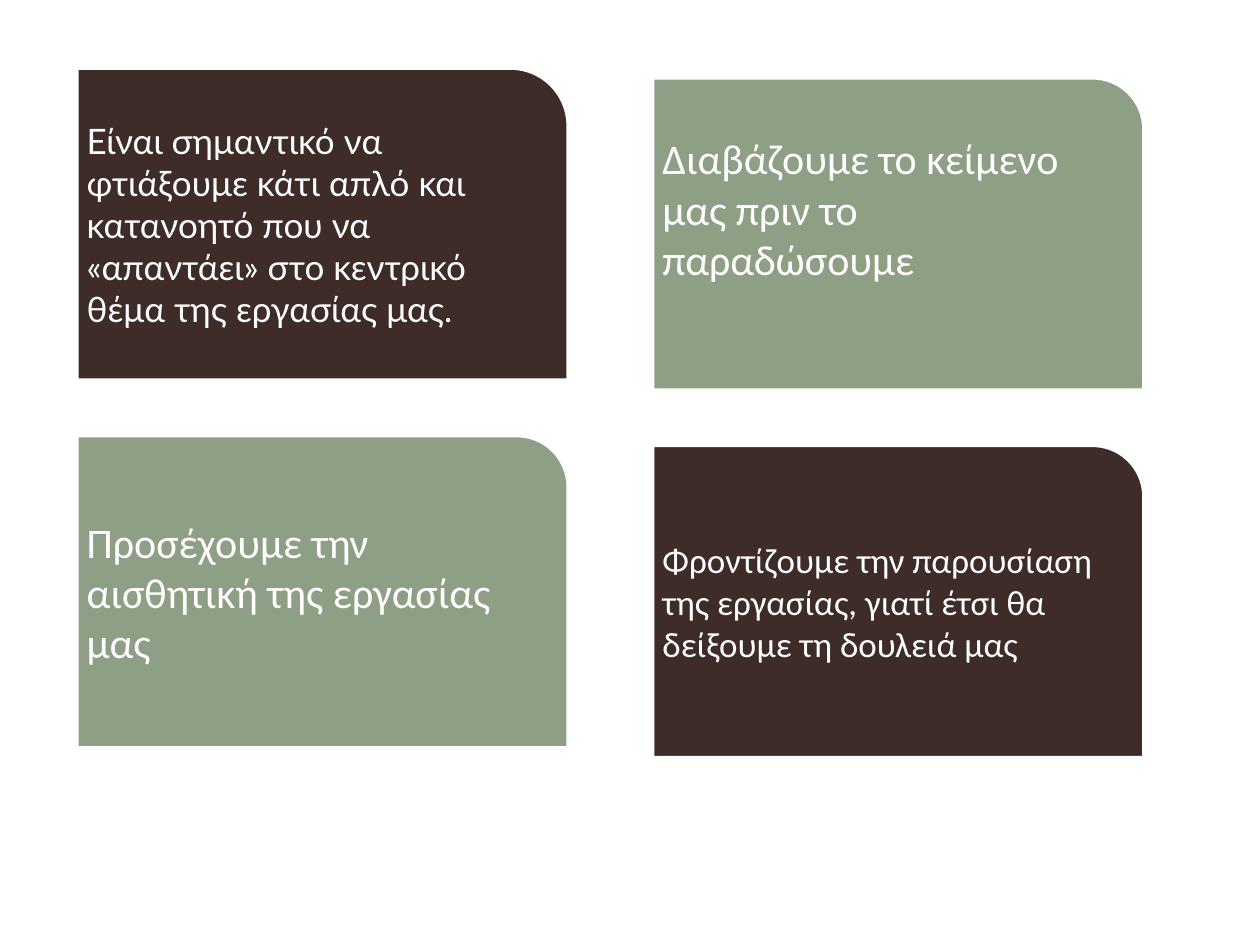
import pptx
import pptx.util
import pptx.dml.color
import pptx.enum.shapes
import pptx.enum.text

Pt = pptx.util.Pt

BROWN, GREEN, WHITE = "3D2C27", "8E9F86", "FFFFFF"
CARDS = [
    ("Είναι σημαντικό να φτιάξουμε κάτι απλό και κατανοητό που να «απαντάει» "
     "στο κεντρικό θέμα της εργασίας μας.", BROWN, "Lato", 20, 0.19, 3.6),
    ("Διαβάζουμε το κείμενο μας πριν το παραδώσουμε", GREEN, "Calibri", 24, 0.17, 32.9),
    ("Προσέχουμε την αισθητική της εργασίας μας", GREEN, "Calibri", 24, 0.17, 3.6),
    ("Φροντίζουμε την παρουσίαση της εργασίας, γιατί έτσι θα δείξουμε τη δουλειά μας",
     BROWN, "Calibri", 20, 0.17, 3.6),
]
LEFT, TOP, WIDTH, HEIGHT = 42.5, 37.4, 283.7, 181.4
COLUMN_STEP, ROW_STEP, COLUMN_DROP = 329, 210, 5.6


def color(value):
    return pptx.dml.color.RGBColor.from_string(value)


def apply(target, values):
    for name, value in values.items():
        setattr(target, name, value)


def add_card(page, index, card):
    text, fill, font, size, corner, bottom = card
    row, column = divmod(index, 2)
    box = page.shapes.add_shape(
        pptx.enum.shapes.MSO_SHAPE.ROUND_1_RECTANGLE,
        Pt(LEFT + column * COLUMN_STEP),
        Pt(TOP + row * ROW_STEP + column * COLUMN_DROP),
        Pt(WIDTH), Pt(HEIGHT))
    box.adjustments[0] = corner
    box.shadow.inherit = False
    box.fill.solid()
    box.fill.fore_color.rgb = color(fill)
    box.line.color.rgb = color(WHITE)
    box.line.width = Pt(5)
    apply(box.text_frame, {
        "word_wrap": True,
        "vertical_anchor": pptx.enum.text.MSO_ANCHOR.MIDDLE,
        "margin_bottom": Pt(bottom),
    })
    para = box.text_frame.paragraphs[0]
    para.alignment = pptx.enum.text.PP_ALIGN.LEFT
    span = para.add_run()
    span.text = text
    apply(span.font, {"name": font, "size": Pt(size)})
    span.font.color.rgb = color(WHITE)


def main():
    deck = pptx.Presentation()
    apply(deck, {"slide_width": Pt(720), "slide_height": Pt(540)})
    page = deck.slides.add_slide(deck.slide_layouts[6])
    for index, card in enumerate(CARDS):
        add_card(page, index, card)
    deck.save("out.pptx")


if __name__ == "__main__":
    main()
